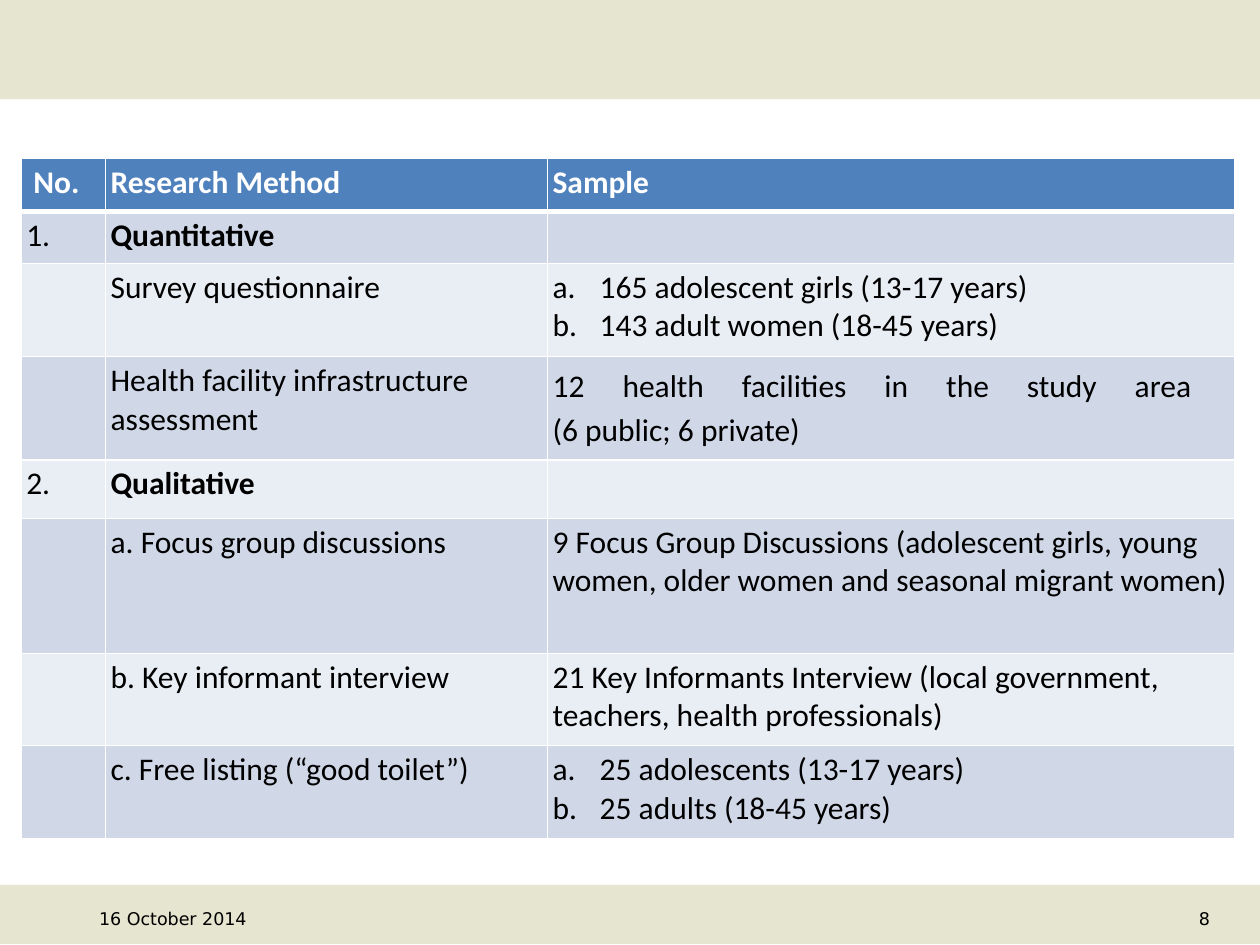
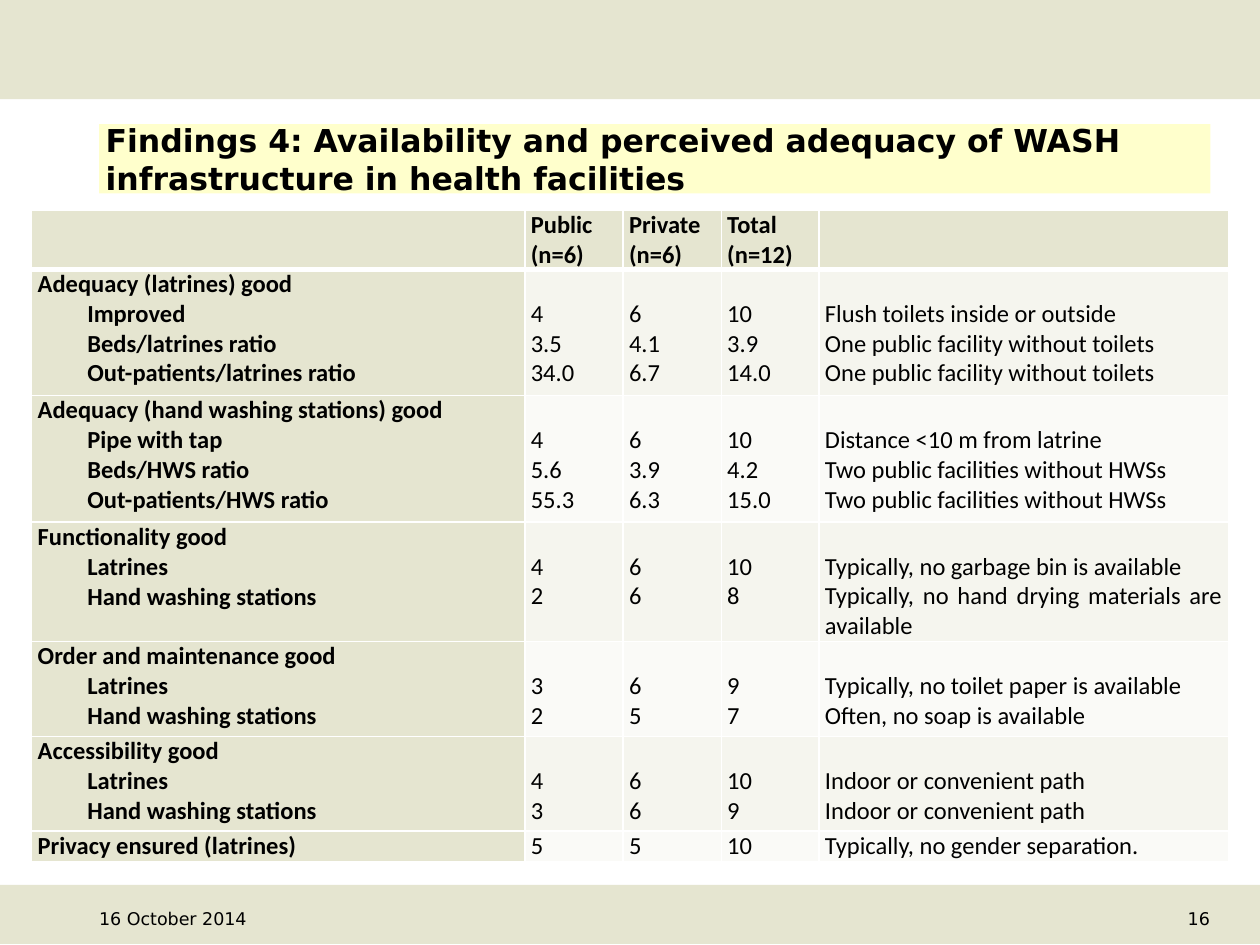
from lxml import etree
from pptx import Presentation
from pptx import util as u
from pptx.dml.color import RGBColor
from pptx.enum import shapes, text
from pptx.oxml import ns

BLACK = RGBColor(0x00, 0x00, 0x00)
WHITE = RGBColor(0xFF, 0xFF, 0xFF)
SAND = RGBColor(0xE5, 0xE5, 0xD0)
CREAM = RGBColor(0xFF, 0xFF, 0xCC)
BLUE = RGBColor(0x4F, 0x81, 0xBD)
BLUES = (RGBColor(0xD0, 0xD8, 0xE8), RGBColor(0xE9, 0xED, 0xF4))
SANDS = (RGBColor(0xF5, 0xF5, 0xEE), RGBColor(0xFA, 0xFA, 0xF7))
SANS, BODY = "DejaVu Sans", "Calibri"
LEFT, RIGHT, FULL = text.PP_ALIGN.LEFT, text.PP_ALIGN.RIGHT, text.PP_ALIGN.JUSTIFY
DATE = "16 October 2014"
WIDE, HIGH = 25.4, 19.05  # slide size, cm
LINE = 0.6  # height of one 14 pt line, cm

METHODS = [
    (" No.", "Research Method", "Sample"),
    ("1.", "Quantitative", ""),
    ("", "Survey questionnaire",
     ["165 adolescent girls (13-17 years)", "143 adult women (18-45 years)"]),
    ("", "Health facility infrastructure assessment",
     "12 health facilities in the study area \v(6 public; 6 private)"),
    ("2.", "Qualitative", ""),
    ("", "a. Focus group discussions",
     "9 Focus Group Discussions (adolescent girls, young women, older women "
     "and seasonal migrant women)"),
    ("", "b. Key informant interview",
     "21 Key Informants Interview (local government, teachers, health professionals)"),
    ("", "c. Free listing (“good toilet”)",
     ["25 adolescents (13-17 years)", "25 adults (18-45 years)"]),
]

HEADS = ("", "Public (n=6)", "Private (n=6)", "Total (n=12)", "")
GROUPS = [
    ("Adequacy (latrines) good", [
        ("Improved", "4", "6", "10", "Flush toilets inside or outside"),
        ("Beds/latrines ratio", "3.5", "4.1", "3.9", "One public facility without toilets"),
        ("Out-patients/latrines ratio", "34.0", "6.7", "14.0",
         "One public facility without toilets")]),
    ("Adequacy (hand washing stations) good", [
        ("Pipe with tap", "4", "6", "10", "Distance <10 m from latrine"),
        ("Beds/HWS ratio", "5.6", "3.9", "4.2", "Two public facilities without HWSs"),
        ("Out-patients/HWS ratio", "55.3", "6.3", "15.0",
         "Two public facilities without HWSs")]),
    ("Functionality good", [
        ("Latrines", "4", "6", "10", "Typically, no garbage bin is available"),
        ("Hand washing stations", "2", "6", "8",
         "Typically, no hand drying materials are available")]),
    ("Order and maintenance good", [
        ("Latrines", "3", "6", "9", "Typically, no toilet paper is available"),
        ("Hand washing stations", "2", "5", "7", "Often, no soap is available")]),
    ("Accessibility good", [
        ("Latrines", "4", "6", "10", "Indoor or convenient path"),
        ("Hand washing stations", "3", "6", "9", "Indoor or convenient path")]),
]
PRIVACY = ("Privacy ensured (latrines)", "5", "5", "10", "Typically, no gender separation.")


def write(frame, lines, size=18, font=BODY, color=BLACK, bold=False, align=LEFT):
    """Fill a text frame, one paragraph a line, and return the paragraphs."""
    lines = [lines] if isinstance(lines, str) else lines
    frame.word_wrap = True
    for i, line in enumerate(lines):
        para = frame.paragraphs[0] if i == 0 else frame.add_paragraph()
        para.text = line
        para.alignment = align
        for run in para.runs:
            run.font.size = u.Pt(size)
            run.font.name = font
            run.font.bold = bold
            run.font.color.rgb = color
    return frame.paragraphs


def indent(para, left, first=0):
    props = para._p.get_or_add_pPr()
    props.set("marL", str(u.Cm(left)))
    props.set("indent", str(u.Cm(first)))
    return props


def letter(para):
    """Number a paragraph a., b., c. with a hanging indent."""
    props = indent(para, 0.95, -0.95)
    etree.SubElement(props, ns.qn("a:buFont"), typeface="+mj-lt")
    etree.SubElement(props, ns.qn("a:buAutoNum"), type="alphaLcPeriod")


def edge(cell, top=1, base=1):
    """Draw white borders; must come before the cell's fill."""
    props = cell._tc.get_or_add_tcPr()
    for side, width in zip("LRTB", (1, 1, top, base)):
        line = etree.SubElement(props, ns.qn("a:ln" + side), w=str(u.Pt(width)))
        fill = etree.SubElement(line, ns.qn("a:solidFill"))
        etree.SubElement(fill, ns.qn("a:srgbClr"), val=str(WHITE))


def margins(box, side, top, base):
    box.margin_left = box.margin_right = u.Cm(side)
    box.margin_top, box.margin_bottom = u.Cm(top), u.Cm(base)


def paint(item, color):
    item.fill.solid()
    item.fill.fore_color.rgb = color


def grid(slide, left, top, widths, heights):
    """Add a table with white borders, heavier below its header."""
    frame = slide.shapes.add_table(
        len(heights), len(widths), u.Cm(left), u.Cm(top),
        u.Cm(sum(widths)), u.Cm(sum(heights)))
    table = frame.table
    table.horz_banding = False
    for col, width in zip(table.columns, widths):
        col.width = u.Cm(width)
    for i, (row, height) in enumerate(zip(table.rows, heights)):
        row.height = u.Cm(height)
        for cell in row.cells:
            edge(cell, 3 if i == 1 else 1, 3 if i == 0 else 1)
    return table


def band(slide, top, height):
    bar = slide.shapes.add_shape(shapes.MSO_SHAPE.RECTANGLE, 0, u.Cm(top),
                                 u.Cm(WIDE), u.Cm(height))
    bar.shadow.inherit = False
    paint(bar, SAND)
    bar.line.fill.background()


def start(prs, layout, page):
    """Add a slide with both bands, the date and the page number."""
    slide = prs.slides.add_slide(prs.slide_layouts[layout])
    band(slide, 17.84, 1.19)
    band(slide, 0, 2)
    for words, left, align in ((DATE, 2, LEFT), (page, 20.2, RIGHT)):
        box = slide.shapes.add_textbox(u.Cm(left), u.Cm(18.19), u.Cm(4.19), u.Cm(0.64))
        frame = box.text_frame
        margins(frame, 0, 0, 0)
        frame.vertical_anchor = text.MSO_ANCHOR.MIDDLE
        write(frame, words, size=10, font=SANS, align=align)
    return slide


def headline(slide, words):
    title = slide.shapes.title
    title.left, title.top = u.Cm(2), u.Cm(2.5)
    title.width, title.height = u.Cm(22.4), u.Cm(1.4)
    paint(title, CREAM)
    frame = title.text_frame
    frame.auto_size = text.MSO_AUTO_SIZE.NONE
    frame.vertical_anchor = text.MSO_ANCHOR.MIDDLE
    margins(frame, 0.13, 0.13, 0.13)
    write(frame, words, font=SANS, bold=True)


def methods(slide):
    table = grid(slide, 0.43, 3.2, (1.7, 8.91, 13.85),
                 (1.06, 1.05, 1.88, 2.08, 1.18, 2.72, 1.86, 1.88))
    for i, (row, entry) in enumerate(zip(table.rows, METHODS)):
        head = i == 0
        for j, (cell, words) in enumerate(zip(row.cells, entry)):
            paint(cell, BLUE if head else BLUES[(i - 1) % 2])
            margins(cell, 0.1, 0.1, 0.1)
            if not words:
                continue
            paras = write(cell.text_frame, words, color=WHITE if head else BLACK,
                          bold=head or (j == 1 and entry[0] != ""))
            if isinstance(words, list):
                for para in paras:
                    letter(para)
            elif "\v" in words:
                paras[0].alignment = FULL
                paras[0].line_spacing = 1.15
                paras[0].space_after = u.Pt(10)


def findings(slide):
    table = grid(slide, 0.64, 4.24, (9.94, 1.98, 1.98, 1.97, 8.25),
                 (1.17, 2.55, 2.55, 2.41, 1.91, 1.91, 0.61))
    rows = [HEADS]
    for name, items in GROUPS:
        labels, *values = map(list, zip(*items))
        rows.append([[name] + labels] + values)
    rows.append(PRIVACY)
    for i, (row, entry) in enumerate(zip(table.rows, rows)):
        for j, (cell, words) in enumerate(zip(row.cells, entry)):
            strong = i == 0 or j == 0
            paint(cell, SAND if strong else SANDS[(i - 1) % 2])
            grouped = isinstance(words, list)
            # Values start one line down, level with the first item.
            margins(cell, 0.12, LINE if grouped and j else 0, 0)
            if not words:
                continue
            paras = write(cell.text_frame, words, size=14, bold=strong, align=FULL)
            if j == 0:
                for para in paras[1:]:
                    indent(para, 1)


def main():
    prs = Presentation()
    prs.slide_width, prs.slide_height = u.Cm(WIDE), u.Cm(HIGH)

    methods(start(prs, 6, "8"))

    slide = start(prs, 5, "16")
    headline(slide, "Findings 4: Availability and perceived adequacy of WASH "
                    "infrastructure in health facilities")
    findings(slide)

    prs.save("out.pptx")


if __name__ == "__main__":
    main()
